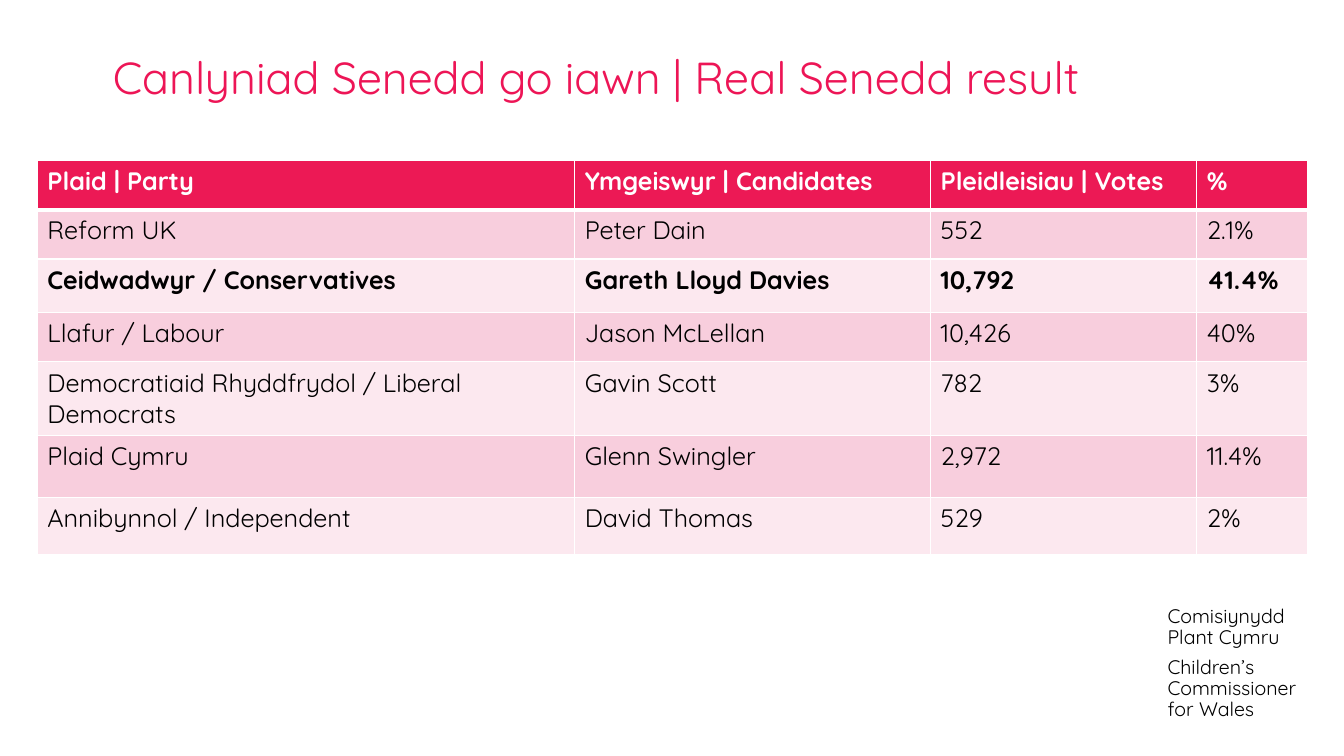
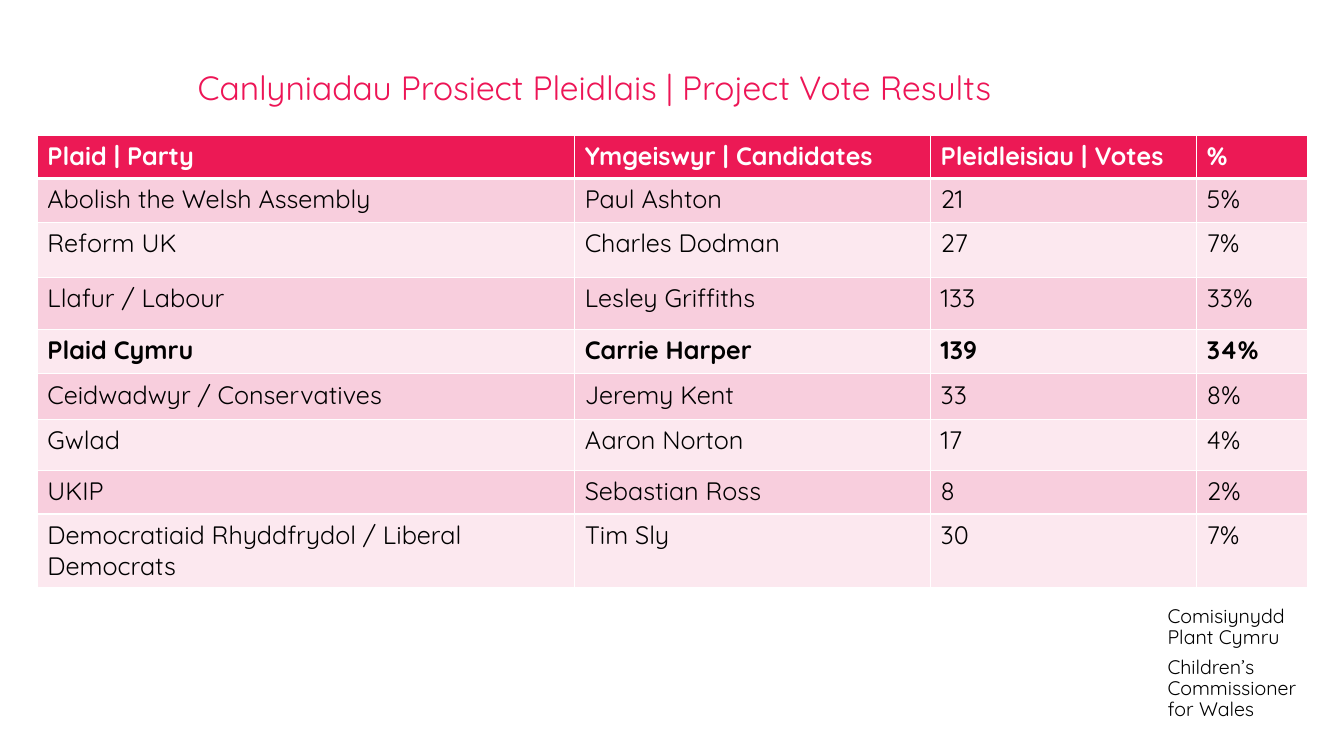
from copy import deepcopy
from dataclasses import dataclass

from lxml.etree import SubElement
from pptx import Presentation
from pptx.dml.color import RGBColor as RGB
from pptx.enum.text import MSO_ANCHOR as Anchor, MSO_AUTO_SIZE as AutoSize
from pptx.oxml.ns import qn
from pptx.util import Inches, Pt


@dataclass(frozen=True)
class Theme:
    """Colours, font and type sizes shared by the slides."""
    font: str = "Quicksand"
    title: str = "ED1556"
    header: str = "EC1955"
    band_dark: str = "F8CEDD"
    band_light: str = "FCE8EF"
    ink: str = "000000"
    paper: str = "FFFFFF"
    body_size: int = 18
    footer_size: int = 14
    rule: int = 1
    header_rule: int = 3


T = Theme()
HEADINGS = ("Plaid | Party", "Ymgeiswyr | Candidates", "Pleidleisiau | Votes", "%")
COLUMNS = (5.33, 3.53, 2.64, 1.1)
FOOTER = ("Comisiynydd\nPlant Cymru", "Children’s\nCommissioner\nfor Wales")
FOOTER_BOX = (11.58, 6.01, 1.38, 1.15)

SLIDES = (
    dict(
        title="Canlyniad Senedd go iawn | Real Senedd result",
        title_box=(1.12, 0.55, 11.84, 0.48),
        title_size=32,
        table_at=(0.37, 1.59),
        heights=(0.49, 0.49, 0.53, 0.49, 0.5, 0.62, 0.57),
        winner="Gareth Lloyd Davies",
        results=(
            ("Reform UK", "Peter Dain", "552", "2.1%"),
            ("Ceidwadwyr / Conservatives", "Gareth Lloyd Davies", "10,792", "41.4%"),
            ("Llafur / Labour", "Jason McLellan", "10,426", "40%"),
            ("Democratiaid Rhyddfrydol / Liberal Democrats", "Gavin Scott", "782", "3%"),
            ("Plaid Cymru", "Glenn Swingler", "2,972", "11.4%"),
            ("Annibynnol / Independent", "David Thomas", "529", "2%"),
        ),
    ),
    dict(
        title="Canlyniadau Prosiect Pleidlais | Project Vote Results",
        title_box=(1.96, 0.71, 9.41, 0.76),
        title_size=24,
        table_at=(0.37, 1.34),
        heights=(0.43, 0.44, 0.54, 0.52, 0.44, 0.45, 0.51, 0.43, 0.43),
        winner="Carrie Harper",
        results=(
            ("Abolish the Welsh Assembly", "Paul Ashton", "21", "5%"),
            ("Reform UK", "Charles Dodman", "27", "7%"),
            ("Llafur / Labour", "Lesley Griffiths", "133", "33%"),
            ("Plaid Cymru", "Carrie Harper", "139", "34%"),
            ("Ceidwadwyr / Conservatives", "Jeremy Kent", "33", "8%"),
            ("Gwlad", "Aaron Norton", "17", "4%"),
            ("UKIP", "Sebastian Ross", "8", "2%"),
            ("Democratiaid Rhyddfrydol / Liberal Democrats", "Tim Sly", "30", "7%"),
        ),
    ),
)


def write(p, text, size=T.body_size, color=T.ink, bold=False, leading=None, after=None):
    """Write formatted text into a paragraph, breaking lines at newlines."""
    for i, line in enumerate(text.split("\n")):
        if i:
            p.add_line_break()
        r = p.add_run()
        r.text = line
        r.font.name = T.font
        r.font.size = Pt(size)
        r.font.bold = bold
        r.font.color.rgb = RGB.from_string(color)
    for br in p._p.findall(qn("a:br")):
        br.insert(0, deepcopy(r.font._element))
    if leading:
        p.line_spacing = leading
    if after:
        p.space_after = Pt(after)


def add_text_box(s, box, anchor=Anchor.TOP):
    """Add a wrapping text box without insets and return its frame."""
    tf = s.shapes.add_textbox(*map(Inches, box)).text_frame
    tf.word_wrap = True
    tf.auto_size = AutoSize.NONE
    tf.vertical_anchor = anchor
    tf.margin_left = tf.margin_top = tf.margin_right = tf.margin_bottom = 0
    return tf


def add_title(s, box, text, size):
    """Place the slide title."""
    p = add_text_box(s, box).paragraphs[0]
    write(p, text, size=size, color=T.title, leading=0.9)


def add_footer(s, box):
    """Place the bilingual name of the office."""
    tf = add_text_box(s, box, Anchor.MIDDLE)
    welsh, english = FOOTER
    write(tf.paragraphs[0], welsh, size=T.footer_size, leading=0.9, after=6)
    write(tf.add_paragraph(), english, size=T.footer_size, leading=0.9)


def set_borders(cell, top, bottom):
    """Draw the four cell borders with the given top and bottom widths."""
    tc_pr = cell._tc.get_or_add_tcPr()
    for side, width in zip("LRTB", (T.rule, T.rule, top, bottom)):
        ln = SubElement(tc_pr, qn(f"a:ln{side}"), w=str(Pt(width)))
        SubElement(SubElement(ln, qn("a:solidFill")), qn("a:srgbClr"), val=T.paper)


def fill_cell(cell, text, fill, color, bold, top, bottom):
    """Give a cell its borders, fill and text."""
    set_borders(cell, top, bottom)
    cell.fill.solid()
    cell.fill.fore_color.rgb = RGB.from_string(fill)
    write(cell.text_frame.paragraphs[0], text, color=color, bold=bold)


def add_results(s, at, heights, results, winner):
    """Place the banded results table with the winner in bold."""
    rows = (HEADINGS, *results)
    box = (*at, sum(COLUMNS), sum(heights))
    table = s.shapes.add_table(len(rows), len(COLUMNS), *map(Inches, box)).table
    table.first_row = table.horz_banding = False
    for column, width in zip(table.columns, COLUMNS):
        column.width = Inches(width)
    for i, (values, height) in enumerate(zip(rows, heights)):
        table.rows[i].height = Inches(height)
        head = i == 0
        look = dict(
            fill=T.header if head else T.band_dark if i % 2 else T.band_light,
            color=T.paper if head else T.ink,
            bold=head or winner in values,
            top=T.header_rule if i == 1 else T.rule,
            bottom=T.header_rule if head else T.rule,
        )
        for j, text in enumerate(values):
            fill_cell(table.cell(i, j), text, **look)


def add_result_slide(prs, title, title_box, title_size, table_at, heights, winner, results):
    """Add one slide of election results."""
    s = prs.slides.add_slide(prs.slide_layouts[6])
    add_footer(s, FOOTER_BOX)
    add_title(s, title_box, title, title_size)
    add_results(s, table_at, heights, results, winner)


def main():
    """Build and save the presentation."""
    prs = Presentation()
    prs.slide_width, prs.slide_height = Inches(13.33), Inches(7.5)
    for content in SLIDES:
        add_result_slide(prs, **content)
    prs.save("out.pptx")


if __name__ == "__main__":
    main()
